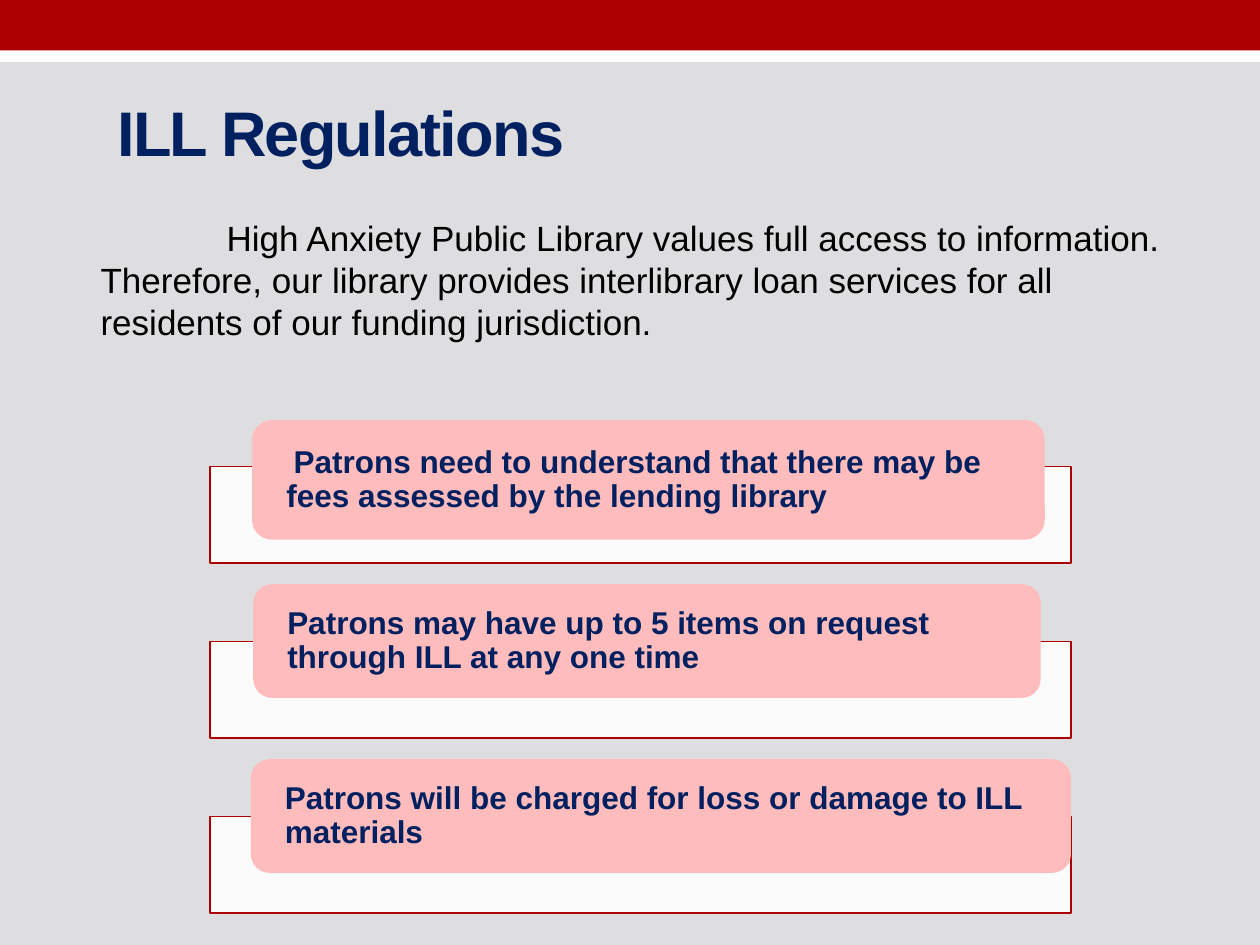
import pptx
import pptx.util
import pptx.dml.color
import pptx.enum.shapes
import pptx.enum.text
import pptx.oxml.ns
import lxml.etree

Pt = pptx.util.Pt
SHAPES = pptx.enum.shapes.MSO_SHAPE
MIDDLE = pptx.enum.text.MSO_ANCHOR.MIDDLE
TOP = pptx.enum.text.MSO_ANCHOR.TOP
RED, NAVY, PINK, WHITE = "AD0101", "002060", "FFBCBC", "FFFFFF"
BLACK, GREY = "000000", "DEDEE0"


def color(hex_code):
    return pptx.dml.color.RGBColor.from_string(hex_code)


def add_block(page, kind, box, fill, line=None, opacity=None):
    shape = page.shapes.add_shape(kind, *[Pt(length) for length in box])
    shape.shadow.inherit = False
    shape.fill.solid()
    shape.fill.fore_color.rgb = color(fill)
    if opacity is not None:
        tint = shape.fill._xPr.find(".//" + pptx.oxml.ns.qn("a:srgbClr"))
        alpha = lxml.etree.SubElement(tint, pptx.oxml.ns.qn("a:alpha"))
        alpha.set("val", str(opacity * 1000))
    if line:
        shape.line.color.rgb = color(line)
        shape.line.width = Pt(0.75)
    else:
        shape.line.fill.background()
    return shape


def set_frame(frame, anchor, side=7.2, edge=3.6):
    frame.word_wrap = True
    frame.vertical_anchor = anchor
    frame.margin_left = frame.margin_right = Pt(side)
    frame.margin_top = frame.margin_bottom = Pt(edge)
    para = frame.paragraphs[0]
    para.alignment = pptx.enum.text.PP_ALIGN.LEFT
    return para


def add_span(para, text, size, hex_code, bold=False):
    span = para.add_run()
    span.text = text
    span.font.name = "Arial"
    span.font.size = Pt(size)
    span.font.bold = bold
    span.font.color.rgb = color(hex_code)
    return span


def add_header(page, left, top, width):
    # White stripe below the red band
    add_block(page, SHAPES.RECTANGLE, (left, top + 17.5, width, 18), WHITE)
    add_block(page, SHAPES.RECTANGLE, (left, top, width, 28.8), RED)


def add_title(page, box):
    title = page.shapes.add_textbox(*[Pt(length) for length in box])
    para = set_frame(title.text_frame, MIDDLE)
    span = add_span(para, "ILL Regulations", 36, NAVY, bold=True)
    span.font._element.set("spc", "-100")


def add_intro(page, box):
    intro = page.shapes.add_textbox(*[Pt(length) for length in box])
    para = set_frame(intro.text_frame, TOP)
    para.space_before = Pt(5)
    # The first line starts one inch further in than the rest
    properties = para._p.get_or_add_pPr()
    properties.set("marL", str(Pt(14.4)))
    properties.set("indent", str(Pt(72)))
    add_span(para, "High Anxiety Public Library values full access to information. "
             "Therefore, our library provides interlibrary loan services for all "
             "residents of our funding jurisdiction.", 20, BLACK)


def add_rules(page, left, top, width):
    # Each rule: label box (left, top, width, height) and its runs (text, size, bold)
    rules = [
        ((144, 240, 453, 68.4), [
            (" ", 15, False),
            ("Patrons need to understand that there may be fees assessed "
             "by the lending library", 18, True)]),
        ((144.7, 333.8, 450, 65), [
            ("Patrons may have up to 5 items on request through ILL "
             "at any one time", 18, True)]),
        ((143.3, 433.8, 468.7, 65), [
            ("Patrons will be charged for loss or damage to ILL materials", 18, True)]),
    ]
    for index, (label_box, runs) in enumerate(rules):
        add_block(page, SHAPES.RECTANGLE, (left, top + 100 * index, width, 55.4),
                  WHITE, line=RED, opacity=90)
        label = add_block(page, SHAPES.ROUNDED_RECTANGLE, label_box, PINK)
        para = set_frame(label.text_frame, MIDDLE, side=16.3, edge=3.3)
        para.line_spacing = 0.9
        for text, size, bold in runs:
            add_span(para, text, size, NAVY, bold)


def main():
    deck = pptx.Presentation()
    deck.slide_width, deck.slide_height = Pt(720), Pt(540)
    page = deck.slides.add_slide(deck.slide_layouts[6])
    page.background.fill.solid()
    page.background.fill.fore_color.rgb = color(GREY)
    add_header(page, 0, 0, 720)
    add_title(page, (60, 42, 630, 66))
    add_intro(page, (36, 120, 648, 353))
    add_rules(page, 120, 266.4, 492)
    deck.save("out.pptx")


if __name__ == "__main__":
    main()
